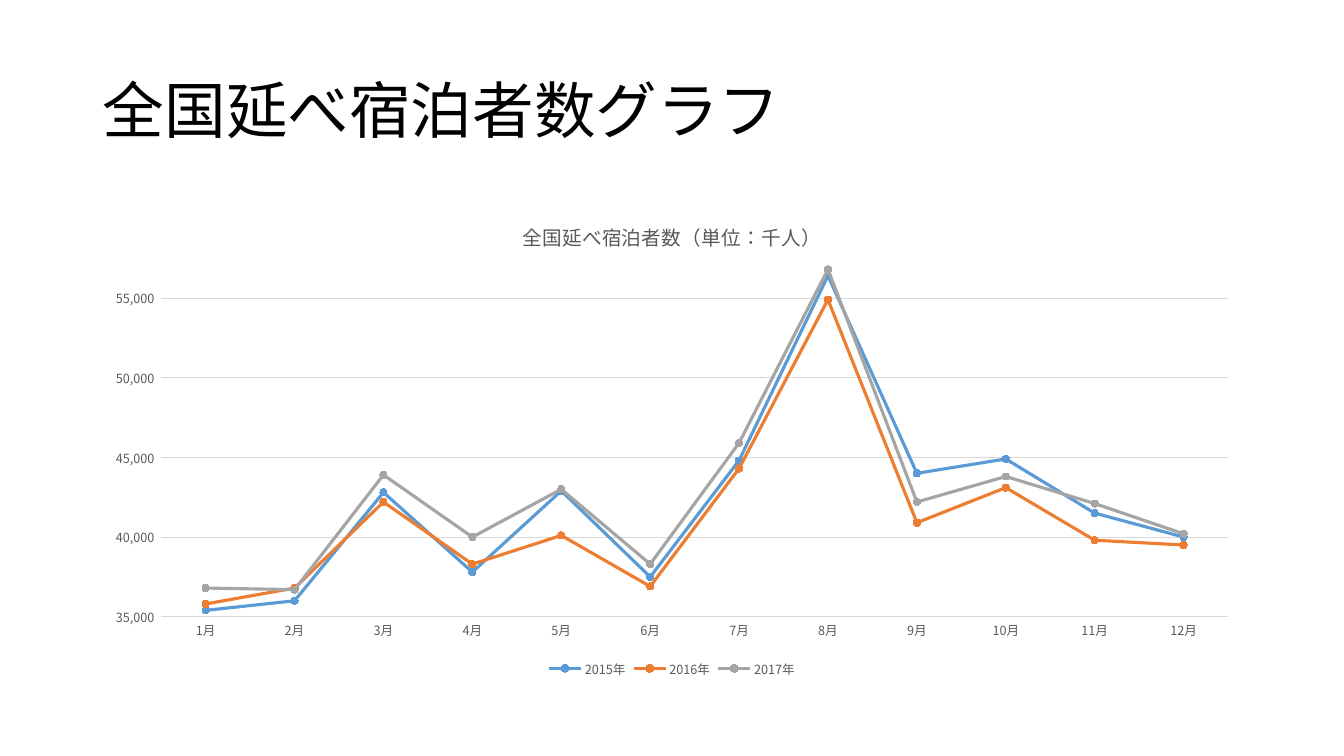
from lxml.etree import Element
from pptx import Presentation
from pptx.chart.data import CategoryChartData
from pptx.dml.color import RGBColor
from pptx.enum.chart import XL_CHART_TYPE, XL_LEGEND_POSITION, XL_MARKER_STYLE, XL_TICK_MARK
from pptx.enum.text import MSO_ANCHOR, PP_ALIGN
from pptx.oxml.ns import qn
from pptx.util import Inches, Pt

TITLE = "全国延べ宿泊者数グラフ"
CHART_TITLE = "全国延べ宿泊者数（単位：千人）"
FONT = "Noto Sans CJK JP"
BLACK = RGBColor(0x00, 0x00, 0x00)
GRAY = RGBColor(0x59, 0x59, 0x59)
GRID = RGBColor(0xD9, 0xD9, 0xD9)
BLUE = RGBColor(0x5B, 0x9B, 0xD5)
ORANGE = RGBColor(0xED, 0x7D, 0x31)
SILVER = RGBColor(0xA5, 0xA5, 0xA5)

MONTHS = [f"{month}月" for month in range(1, 13)]
GUESTS = [
    ("2015年", BLUE, (35400, 36000, 42800, 37800, 42900, 37500,
                     44800, 56400, 44000, 44900, 41500, 40000)),
    ("2016年", ORANGE, (35800, 36800, 42200, 38300, 40100, 36900,
                       44300, 54900, 40900, 43100, 39800, 39500)),
    ("2017年", SILVER, (36800, 36700, 43900, 40000, 43000, 38300,
                       45900, 56800, 42200, 43800, 42100, 40200)),
]

WIDTH, HEIGHT = 13.33, 7.5
MARGIN = 0.92
CONTENT_WIDTH = WIDTH - 2 * MARGIN
TITLE_TOP, TITLE_HEIGHT = 0.4, 1.45
CHART_TOP, CHART_HEIGHT = 2, 4.76


def format_font(font, size, color):
    font.name = FONT
    font.size = Pt(size)
    font.bold = False
    font.color.rgb = color


def write_text(frame, text, size, color, align=None, line_spacing=None):
    frame.text = text
    paragraph = frame.paragraphs[0]
    paragraph.alignment = align
    paragraph.line_spacing = line_spacing
    format_font(paragraph.runs[0].font, size, color)


def apply_east_asian_font(root):
    """Give every Latin font setting below root its East Asian twin."""
    for latin in list(root.iter(qn("a:latin"))):
        latin.addnext(Element(qn("a:ea"), typeface=FONT))


def format_line(line, color, width):
    line.color.rgb = color
    line.width = Pt(width)


def add_title(slide):
    title = slide.shapes.title
    title.left, title.top = Inches(MARGIN), Inches(TITLE_TOP)
    title.width, title.height = Inches(CONTENT_WIDTH), Inches(TITLE_HEIGHT)
    frame = title.text_frame
    frame.word_wrap = True
    frame.vertical_anchor = MSO_ANCHOR.MIDDLE
    write_text(frame, TITLE, 44, BLACK, align=PP_ALIGN.LEFT, line_spacing=0.9)
    apply_east_asian_font(frame._txBody)


def format_axes(chart):
    for axis in (chart.category_axis, chart.value_axis):
        axis.major_tick_mark = axis.minor_tick_mark = XL_TICK_MARK.NONE
        format_font(axis.tick_labels.font, 9, GRAY)
    format_line(chart.category_axis.format.line, GRID, 0.75)

    guests = chart.value_axis
    guests.minimum_scale, guests.maximum_scale = 35000, 57000
    guests.major_unit = 5000
    guests.tick_labels.number_format = "#,##0_ "
    guests.tick_labels.number_format_is_linked = False
    guests.format.line.fill.background()
    guests.has_major_gridlines = True
    format_line(guests.major_gridlines.format.line, GRID, 0.75)


def add_guest_chart(slide):
    data = CategoryChartData(number_format="#,##0")
    data.categories = MONTHS
    for year, _, values in GUESTS:
        data.add_series(year, values)
    chart = slide.shapes.add_chart(
        XL_CHART_TYPE.LINE_MARKERS, Inches(MARGIN), Inches(CHART_TOP),
        Inches(CONTENT_WIDTH), Inches(CHART_HEIGHT), data).chart
    format_font(chart.font, 10, BLACK)
    chart.has_title = True
    write_text(chart.chart_title.text_frame, CHART_TITLE, 14, GRAY)
    chart.chart_title.include_in_layout = False
    chart.has_legend = True
    chart.legend.position = XL_LEGEND_POSITION.BOTTOM
    chart.legend.include_in_layout = False
    format_font(chart.legend.font, 9, GRAY)
    format_axes(chart)

    chart.plots[0].vary_by_categories = False
    for series, (_, color, _) in zip(chart.plots[0].series, GUESTS):
        series.smooth = False
        format_line(series.format.line, color, 2.25)
        series.marker.style = XL_MARKER_STYLE.CIRCLE
        series.marker.size = 5
        series.marker.format.fill.solid()
        series.marker.format.fill.fore_color.rgb = color
        format_line(series.marker.format.line, color, 0.75)
    apply_east_asian_font(chart._chartSpace)


def main():
    presentation = Presentation()
    presentation.slide_width = Inches(WIDTH)
    presentation.slide_height = Inches(HEIGHT)
    slide = presentation.slides.add_slide(presentation.slide_layouts[5])
    add_title(slide)
    add_guest_chart(slide)
    presentation.save("out.pptx")


if __name__ == "__main__":
    main()
